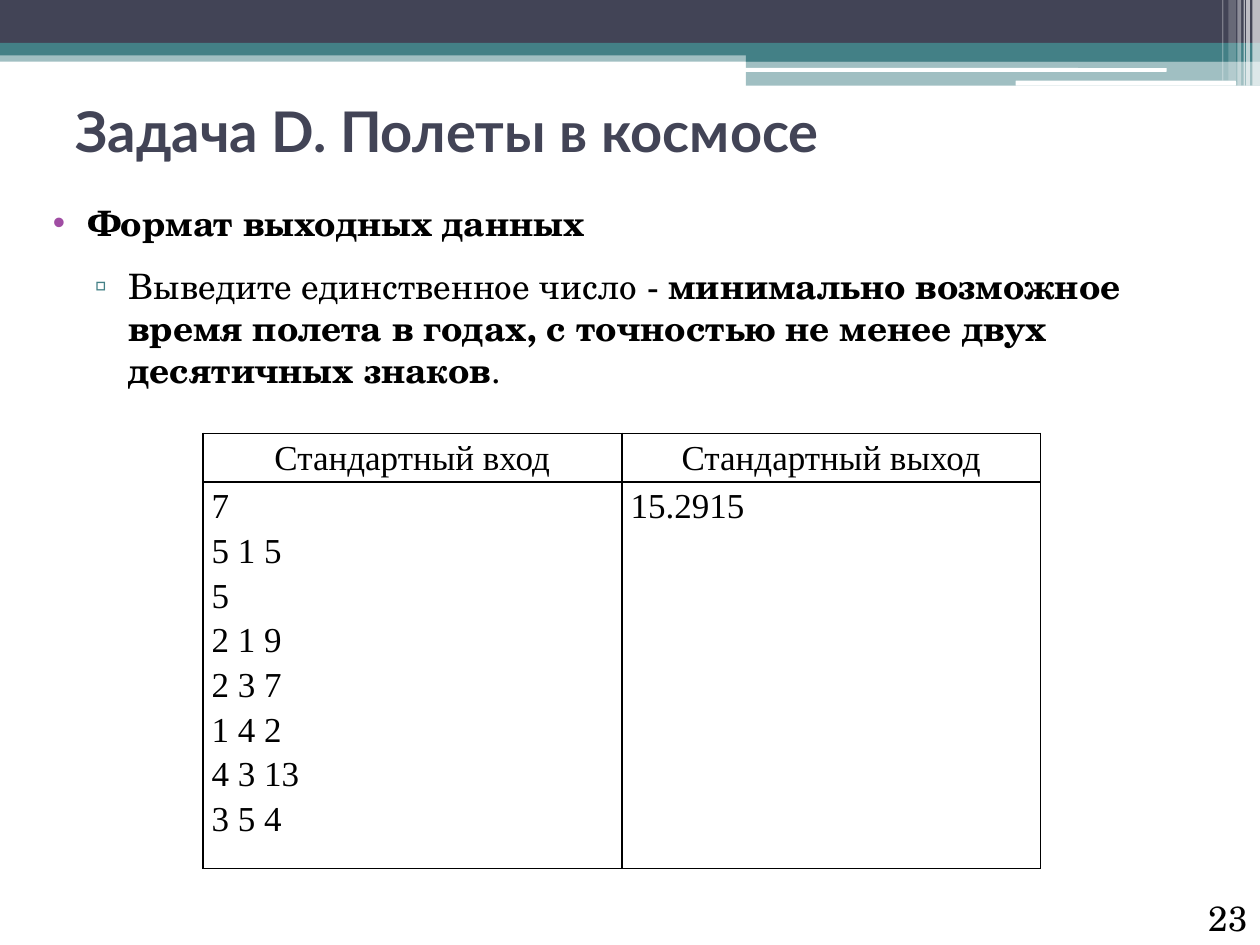
from dataclasses import dataclass

from lxml import etree
from pptx import Presentation
from pptx.dml.color import RGBColor
from pptx.enum import shapes, text
from pptx.oxml.ns import qn
from pptx.util import Inches, Pt


@dataclass(frozen=True)
class Theme:
    ink: str = "000000"
    dark: str = "424456"
    teal: str = "438086"
    purple: str = "A04DA3"
    white: str = "FFFFFF"
    heading_font: str = "Lato"
    body_font: str = "TeX Gyre Schola"
    table_font: str = "Times New Roman"
    title_size: int = 32
    text_size: int = 20


THEME = Theme()


def style(run, font, size, color, bold=False):
    run.font.name = font
    run.font.size = Pt(size)
    run.font.bold = bold
    run.font.color.rgb = RGBColor.from_string(color)


def place(part, box):
    part.left, part.top, part.width, part.height = map(Inches, box)


def add_band(slide, box, color, opacity=100, rounded=False):
    preset = shapes.MSO_SHAPE.ROUNDED_RECTANGLE if rounded else shapes.MSO_SHAPE.RECTANGLE
    band = slide.shapes.add_shape(preset, *map(Inches, box))
    band.shadow.inherit = False
    band.line.fill.background()
    band.fill.solid()
    band.fill.fore_color.rgb = RGBColor.from_string(color)
    if opacity < 100:
        paint = band._element.spPr.find(qn("a:solidFill")).find(qn("a:srgbClr"))
        etree.SubElement(paint, qn("a:alpha"), val=str(opacity * 1000))


def add_header(slide, box):
    left, top, width, height = box
    right = left + width
    wing_left, wing_width = right - 4.08, 4.08
    add_band(slide, (left, top + 0.4, width, 0.09), THEME.teal, 50)
    add_band(slide, (left, top, width, 0.34), THEME.dark)
    add_band(slide, (left, top + 0.34, width, 0.1), THEME.teal)
    add_band(slide, (wing_left, top + 0.39, wing_width, 0.1), THEME.teal)
    add_band(slide, (wing_left, top + 0.48, wing_width, 0.2), THEME.teal, 50)
    add_band(slide, (wing_left - 0.01, top + 0.54, 3.35, 0.03), THEME.white, rounded=True)
    add_band(slide, (right - 1.94, top + 0.64, 1.75, 0.04), THEME.white, rounded=True)

    stripes = [
        (0.06, 0.06, height, 65),
        (0.11, 0.03, height, 65),
        (0.13, 0.01, height, 60),
        (0.18, 0.03, height, 40),
        (0.25, 0.06, height - 0.04, 20),
        (0.3, 0.01, height - 0.04, 30),
    ]
    for offset, stripe_width, stripe_height, opacity in stripes:
        add_band(slide, (right - offset, top, stripe_width, stripe_height), THEME.white, opacity)


def fill_title(slide, box, wording):
    title = slide.shapes.title
    place(title, box)
    frame = title.text_frame
    frame.text = wording
    frame.auto_size = text.MSO_AUTO_SIZE.NONE
    frame.vertical_anchor = text.MSO_ANCHOR.MIDDLE
    heading = frame.paragraphs[0]
    heading.alignment = text.PP_ALIGN.LEFT
    style(heading.runs[0], THEME.heading_font, THEME.title_size, THEME.dark, True)


def set_bullet(paragraph, mark, color, margin, indent):
    properties = paragraph._p.get_or_add_pPr()
    properties.set("marL", str(Inches(margin)))
    properties.set("indent", str(Inches(indent)))
    bullet_color = etree.SubElement(properties, qn("a:buClr"))
    etree.SubElement(bullet_color, qn("a:srgbClr"), val=color)
    etree.SubElement(properties, qn("a:buChar"), char=mark)


def fill_body(slide, box, items):
    body = slide.placeholders[1]
    place(body, box)
    frame = body.text_frame
    frame.auto_size = text.MSO_AUTO_SIZE.NONE
    bullets = [("•", THEME.purple, 0.4, -0.28), ("▫", THEME.teal, 0.72, -0.27)]
    for index, (level, parts) in enumerate(items):
        item = frame.add_paragraph() if index else frame.paragraphs[0]
        item.level = level
        item.space_before = item.space_after = Pt(6)
        set_bullet(item, *bullets[level])
        for wording, bold in parts:
            run = item.add_run()
            run.text = wording
            style(run, THEME.body_font, THEME.text_size, THEME.ink, bold)


def set_borders(cell, color, width):
    properties = cell._tc.get_or_add_tcPr()
    for index, side in enumerate(("lnL", "lnR", "lnT", "lnB")):
        border = etree.Element(qn(f"a:{side}"), w=str(Pt(width)))
        paint = etree.SubElement(border, qn("a:solidFill"))
        etree.SubElement(paint, qn("a:srgbClr"), val=color)
        properties.insert(index, border)


def fill_cell(cell, wording, alignment):
    cell.margin_left = cell.margin_right = Inches(0.07)
    cell.margin_top = cell.margin_bottom = 0
    cell.fill.background()
    set_borders(cell, THEME.ink, 1)
    cell.text = wording
    for line in cell.text_frame.paragraphs:
        line.alignment = alignment
        line.line_spacing = 1.15
        style(line.runs[0], THEME.table_font, THEME.text_size, THEME.ink)


def add_example(slide, box, header, values):
    example = slide.shapes.add_table(2, len(header), *map(Inches, box)).table
    example.first_row = example.horz_banding = False
    header_height = 0.35
    example.rows[0].height = Inches(header_height)
    example.rows[1].height = Inches(box[3] - header_height)
    for column, (heading, value) in enumerate(zip(header, values)):
        fill_cell(example.cell(0, column), heading, text.PP_ALIGN.CENTER)
        fill_cell(example.cell(1, column), value, text.PP_ALIGN.JUSTIFY)


def add_page_number(slide, box, number):
    frame = slide.shapes.add_textbox(*map(Inches, box)).text_frame
    frame.word_wrap = True
    frame.vertical_anchor = text.MSO_ANCHOR.BOTTOM
    frame.text = number
    frame.paragraphs[0].alignment = text.PP_ALIGN.RIGHT
    style(frame.paragraphs[0].runs[0], THEME.body_font, THEME.text_size, THEME.ink)


def main():
    deck = Presentation()
    deck.slide_width, deck.slide_height = Inches(10), Inches(7.5)
    slide = deck.slides.add_slide(deck.slide_layouts[1])

    add_header(slide, (0, 0, 10, 0.68))
    fill_title(slide, (0.5, 0.68, 9, 0.71), "Задача D. Полеты в космосе")
    fill_body(slide, (0.2, 1.55, 9.53, 5.64), [
        (0, [("Формат выходных данных", True)]),
        (1, [
            ("Выведите единственное число - ", False),
            ("минимально возможное время полета в годах, "
             "с точностью не менее двух десятичных знаков", True),
            (".", False),
        ]),
    ])
    add_page_number(slide, (9.17, 7.1, 0.83, 0.4), "23")
    sample_input = ["7", "5 1 5", "5", "2 1 9", "2 3 7", "1 4 2", "4 3 13", "3 5 4"]
    add_example(
        slide, (1.61, 3.44, 6.65, 3.18),
        ["Стандартный вход", "Стандартный выход"],
        ["\n".join(sample_input), "15.2915"],
    )
    deck.save("out.pptx")


if __name__ == "__main__":
    main()
